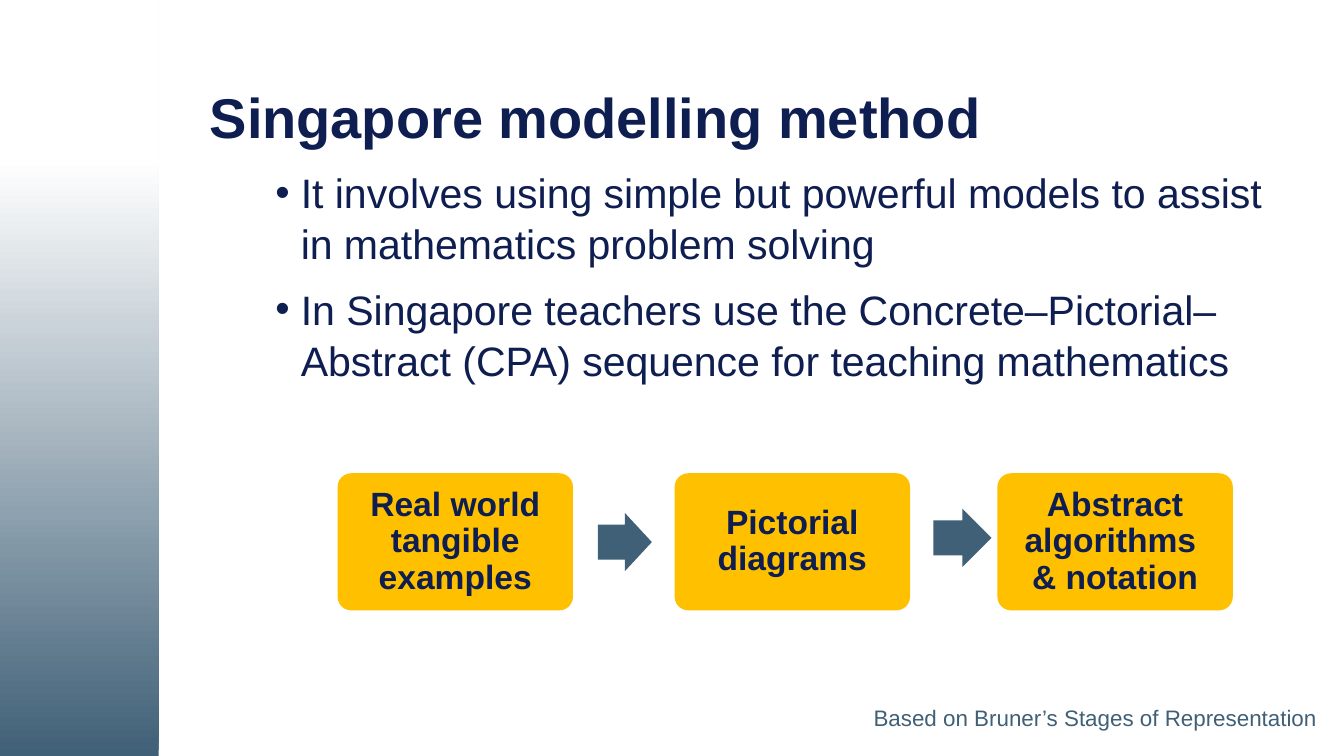
from pptx import Presentation
from pptx import util as u
from pptx.dml.color import RGBColor
from pptx.enum import shapes, text
from pptx.oxml import parse_xml
from pptx.oxml.ns import nsdecls

# Content
TITLE = "Singapore modelling method"
BULLETS = [
    "It involves using simple but powerful models to assist in mathematics problem solving",
    "In Singapore teachers use the Concrete–Pictorial–Abstract (CPA) sequence for teaching mathematics",
]
# Stage text lines and left edge, in cm
STAGES = [
    (["Real world tangible examples"], 6.38),
    (["Pictorial diagrams"], 12.75),
    (["Abstract algorithms ", "& notation"], 18.85),
]
# Arrow left, top, width, height, in cm
ARROWS = [(11.3, 9.69, 1.02, 1.1), (17.64, 9.61, 1.1, 1.1)]
SOURCE = "Based on Bruner’s Stages of Representation"

NAVY, SLATE, AMBER, WHITE = "0F1E50", "406077", "FFC000", "FFFFFF"
STAGE_TOP, STAGE_WIDTH, STAGE_HEIGHT = 8.94, 4.45, 2.59


def color(code):
    return RGBColor.from_string(code)


def place(shape, left, top, width, height):
    shape.left, shape.top = u.Cm(left), u.Cm(top)
    shape.width, shape.height = u.Cm(width), u.Cm(height)


def add_span(para, words, size, code, bold=False):
    span = para.add_run()
    span.text = words
    font = span.font
    font.name, font.size, font.bold = "Arial", u.Pt(size), bold
    font.color.rgb = color(code)


def add_block(page, kind, area, code, adjustments=()):
    shape = page.shapes.add_shape(kind, *map(u.Cm, area))
    shape.shadow.inherit = False
    shape.fill.solid()
    shape.fill.fore_color.rgb = color(code)
    shape.line.fill.background()
    for index, value in enumerate(adjustments):
        shape.adjustments[index] = value
    return shape


deck = Presentation()
deck.slide_width, deck.slide_height = u.Cm(25.4), u.Cm(14.28)
page = deck.slides.add_slide(deck.slide_layouts[1])
title, body = page.placeholders

# Gradient side band, behind everything
band = add_block(page, shapes.MSO_SHAPE.RECTANGLE, (0, 0, 3, 14.28), WHITE)
band.fill.gradient()
band.fill.gradient_angle = 90
for stop, (position, code) in zip(band.fill.gradient_stops, [(0, SLATE), (0.79, WHITE)]):
    stop.position = position
    stop.color.rgb = color(code)
page.shapes._spTree.insert(2, band._element)

# Title
place(title, 3.71, 0.97, 21.18, 2.62)
frame = title.text_frame
frame.auto_size = text.MSO_AUTO_SIZE.NONE
frame.vertical_anchor = text.MSO_ANCHOR.MIDDLE
para = frame.paragraphs[0]
para.alignment = text.PP_ALIGN.LEFT
para.line_spacing = 0.9
add_span(para, TITLE, 30, NAVY, bold=True)

# Bullet list
place(body, 4.95, 3, 19.79, 9.37)
frame = body.text_frame
frame.auto_size = text.MSO_AUTO_SIZE.NONE
for index, words in enumerate(BULLETS):
    para = frame.add_paragraph() if index else frame.paragraphs[0]
    para.line_spacing = 1.04
    para.space_before = u.Pt(7.5 if index else 0)
    properties = para._p.get_or_add_pPr()
    properties.set("marL", str(u.Cm(0.48)))
    properties.set("indent", str(-u.Cm(0.48)))
    properties.append(parse_xml(f'<a:buChar {nsdecls("a")} char="•"/>'))
    add_span(para, words, 22, NAVY)

# Stage boxes
for lines, left in STAGES:
    box = add_block(page, shapes.MSO_SHAPE.ROUNDED_RECTANGLE,
                    (left, STAGE_TOP, STAGE_WIDTH, STAGE_HEIGHT), AMBER, [0.1])
    frame = box.text_frame
    frame.word_wrap = True
    frame.vertical_anchor = text.MSO_ANCHOR.MIDDLE
    frame.margin_left = frame.margin_right = u.Cm(0.25)
    frame.margin_top = frame.margin_bottom = u.Cm(0.25)
    para = frame.paragraphs[0]
    para.alignment = text.PP_ALIGN.CENTER
    para.line_spacing = 0.9
    for index, words in enumerate(lines):
        if index:
            para.add_line_break()
        add_span(para, words, 18, NAVY, bold=True)

# Arrows between stages
for area in ARROWS:
    add_block(page, shapes.MSO_SHAPE.RIGHT_ARROW, area, SLATE, [0.6, 0.5])

# Source note
note = page.shapes.add_textbox(*map(u.Cm, (16.26, 13.18, 9.14, 0.77)))
note.text_frame.word_wrap = True
add_span(note.text_frame.paragraphs[0], SOURCE, 12, SLATE)

deck.save("out.pptx")
